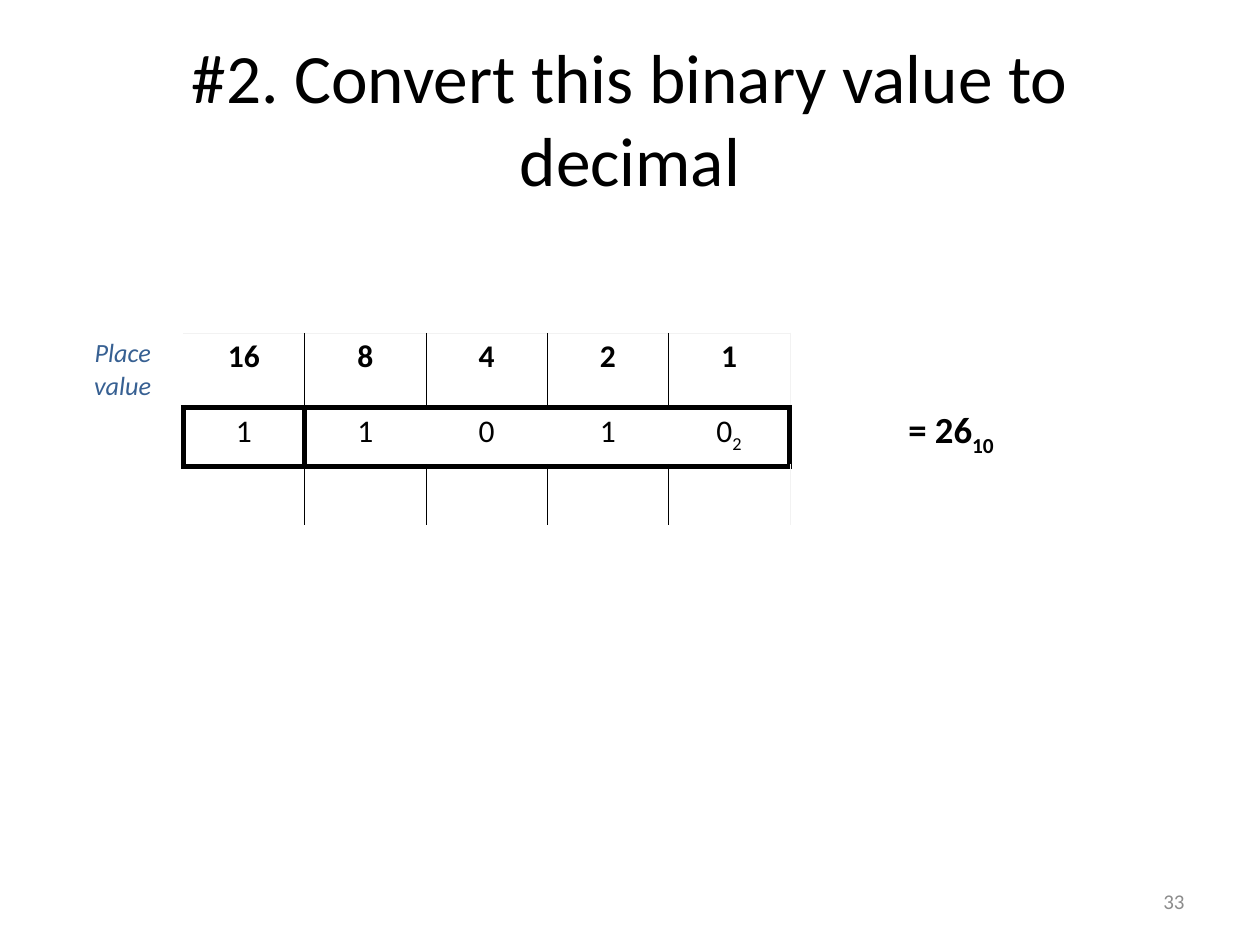
from lxml.etree import SubElement
from pptx import Presentation
from pptx.dml.color import RGBColor
from pptx.enum.text import MSO_ANCHOR, MSO_AUTO_SIZE, PP_ALIGN
from pptx.oxml.ns import qn
from pptx.util import Pt

BLACK = RGBColor(0x00, 0x00, 0x00)
BLUE = RGBColor(0x37, 0x60, 0x92)
GRAY = RGBColor(0x8C, 0x8C, 0x8C)
PALE = RGBColor(0xF2, 0xF2, 0xF2)
WHITE = RGBColor(0xFF, 0xFF, 0xFF)
SCALE = 914400 / 126
NO_GRID = "{2D5ABB26-0587-4C30-8999-92F81FD0307C}"
THIN, THICK = 0.25, 3


def px(*sizes):
    return [round(size * SCALE) for size in sizes]


def style(para, size, color=BLACK, bold=False, italic=False, align=PP_ALIGN.CENTER):
    para.alignment = align
    for run in para.runs:
        font = run.font
        font.name, font.size = "Calibri", Pt(size)
        font.bold, font.italic = bold, italic
        font.color.rgb = color


deck = Presentation()
deck.slide_width, deck.slide_height = px(1260, 945)
slide = deck.slides.add_slide(deck.slide_layouts[5])

title = slide.shapes.title
title.left, title.top, title.width, title.height = px(63, 38, 1134, 158)
frame = title.text_frame
frame.text = "#2. Convert this binary value to decimal"
frame.auto_size = MSO_AUTO_SIZE.NONE
frame.vertical_anchor = MSO_ANCHOR.MIDDLE
style(frame.paragraphs[0], 39.6)

rows = [
    ["Place value", "16", "8", "4", "2", "1"],
    ["", "1", "1", "0", "1", "0"],
    ["", "", "", "", "", ""],
]
table = slide.shapes.add_table(3, 6, *px(62, 333, 728, 190)).table
table.first_row = table.horz_banding = False
table._tbl.tblPr.find(qn("a:tableStyleId")).text = NO_GRID
for row, height in zip(table.rows, px(72, 59, 59)):
    row.height = height

for r, words in enumerate(rows):
    for c, word in enumerate(words):
        cell = table.cell(r, c)
        cell.margin_left, cell.margin_right, cell.margin_top, cell.margin_bottom = px(9, 9, 5, 5)
        para = cell.text_frame.paragraphs[0]
        para.text = word
        if r == 1 and c == 5:
            sub = para.add_run()
            sub.text = "2"
            sub.font._element.set("baseline", "-25000")
        if c == 0:
            style(para, 15, BLUE, italic=True)
        else:
            style(para, 18, bold=r == 0)

        lines = {}
        if c == 0 and r == 1:
            lines["R"] = BLACK, THICK
        elif c > 0 and r == 1:
            lines["T"] = lines["B"] = BLACK, THICK
            if c == 1:
                lines["L"] = BLACK, THICK
            if c == 5:
                lines["R"] = BLACK, THICK
        elif c > 0:
            if c > 1:
                lines["L"] = BLACK, THIN
            lines["R"] = (PALE if c == 5 else BLACK), THIN
            lines["T"] = (PALE, THIN) if r == 0 else (BLACK, THICK)
            lines["B"] = (BLACK, THICK) if r == 0 else (WHITE, THIN)
        props = cell._tc.get_or_add_tcPr()
        for side in "LRTB":
            if side in lines:
                color, width = lines[side]
                line = SubElement(props, qn("a:ln" + side), w=str(Pt(width)))
                fill = SubElement(line, qn("a:solidFill"))
                SubElement(fill, qn("a:srgbClr"), val=str(color))
        cell.fill.background()

answer = slide.shapes.add_textbox(*px(896, 401, 122, 57)).text_frame
answer.word_wrap = False
answer.auto_size = MSO_AUTO_SIZE.SHAPE_TO_FIT_TEXT
para = answer.paragraphs[0]
para.text = "= 26"
base = para.add_run()
base.text = "10"
base.font._element.set("baseline", "-25000")
style(para, 21, bold=True, align=PP_ALIGN.LEFT)

number = slide.shapes.add_textbox(*px(903, 876, 294, 50)).text_frame
number.word_wrap = True
number.vertical_anchor = MSO_ANCHOR.MIDDLE
number.text = "33"
style(number.paragraphs[0], 12, GRAY, align=PP_ALIGN.RIGHT)

deck.save("out.pptx")
